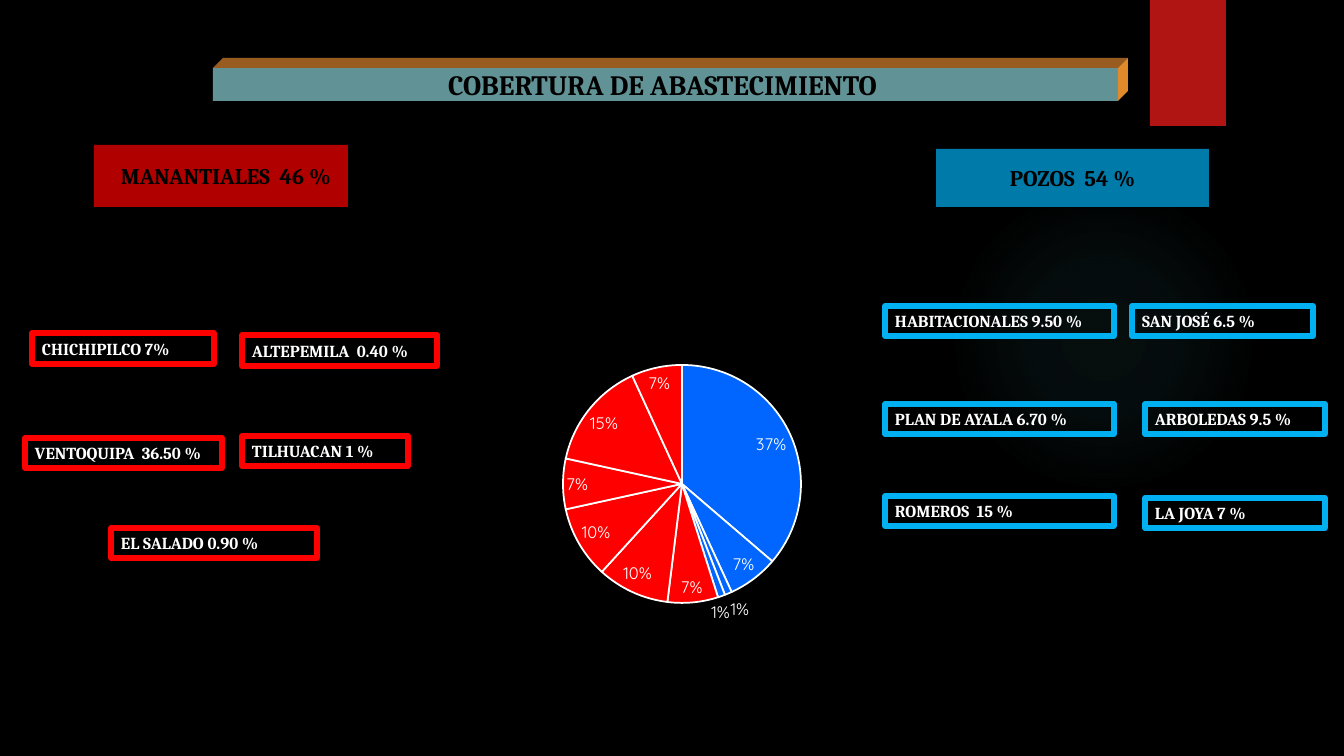
from dataclasses import dataclass

from lxml import etree
from pptx import Presentation
from pptx.chart.data import CategoryChartData
from pptx.dml.color import RGBColor
from pptx.enum.chart import XL_CHART_TYPE, XL_LABEL_POSITION
from pptx.enum.shapes import MSO_SHAPE
from pptx.enum.text import MSO_ANCHOR, PP_ALIGN
from pptx.oxml import parse_xml
from pptx.oxml.ns import nsdecls, qn
from pptx.util import Emu, Pt

RECTANGLE, OVAL = MSO_SHAPE.RECTANGLE, MSO_SHAPE.OVAL
LEFT, CENTER = PP_ALIGN.LEFT, PP_ALIGN.CENTER
MIDDLE = MSO_ANCHOR.MIDDLE
PIE, BEST_FIT = XL_CHART_TYPE.PIE, XL_LABEL_POSITION.BEST_FIT

SLIDE_WIDTH, SLIDE_HEIGHT = 1344, 756
EMU_PER_PX = 12192000 / SLIDE_WIDTH
TEXT_FONT, CHART_FONT = "Cambria", "Quicksand"
COLORS = {
    "black": "000000", "white": "FFFFFF", "ribbon": "B01513", "glow": "50B9C1",
    "bar": "619396", "bar_top": "985C20", "bar_side": "E08A2C",
    "springs_head": "B00000", "wells_head": "007AA8",
    "springs": "FF0000", "wells": "00B0F0", "slice_blue": "0066FF",
}


@dataclass(frozen=True)
class Box:
    text: str
    left: int
    top: int
    width: int
    height: int = 30
    color: str = "springs"


HEADERS = [
    Box("MANANTIALES  46 %", 94, 145, 254, 62, "springs_head"),
    Box("POZOS  54 %", 936, 149, 273, 58, "wells_head"),
]
SOURCES = [
    Box("CHICHIPILCO 7%", 32, 333, 182, 31),
    Box("ALTEPEMILA  0.40 %", 242, 335, 195, 31),
    Box("VENTOQUIPA  36.50 %", 25, 438, 197),
    Box("TILHUACAN 1 %", 242, 436, 166),
    Box("EL SALADO 0.90 %", 111, 528, 206),
    Box("HABITACIONALES 9.50 %", 885, 306, 229, color="wells"),
    Box("SAN JOSÉ 6.5 %", 1132, 306, 181, color="wells"),
    Box("PLAN DE AYALA 6.70 %", 885, 404, 229, color="wells"),
    Box("ARBOLEDAS 9.5 %", 1145, 404, 180, color="wells"),
    Box("ROMEROS  15 %", 885, 496, 229, color="wells"),
    Box("LA JOYA 7 %", 1145, 498, 180, color="wells"),
]
SPRING_SHARES = {"manvent": 0.37, "manchichi": 0.07, "mantilhua": 0.01,
                 "manaltepe": 0, "mansalado": 0.01}
WELL_SHARES = {"pozoplanay": 0.07, "pozohab": 0.1, "pozoarbo": 0.1,
               "pozosnjose": 0.07, "pozoromer": 0.15, "pozojoya": 0.07}


def px(value: float) -> Emu:
    return Emu(round(value * EMU_PER_PX))


def rgb(name: str) -> RGBColor:
    return RGBColor.from_string(COLORS[name])


def write(shape, text: str, *, size: int, color: str, align=LEFT,
          wrap: bool = True, inset_left: int = 10, inset_right: int = 10) -> None:
    frame = shape.text_frame
    frame.word_wrap = wrap
    frame.vertical_anchor = MIDDLE
    frame.margin_left, frame.margin_right = px(inset_left), px(inset_right)
    frame.margin_top = frame.margin_bottom = px(5)
    paragraph = frame.paragraphs[0]
    paragraph.text = text
    paragraph.alignment = align
    font = paragraph.font
    font.name, font.size, font.bold = TEXT_FONT, Pt(size), True
    font.color.rgb = rgb(color)


def paint(shape, color: str) -> None:
    shape.shadow.inherit = False
    shape.fill.solid()
    shape.fill.fore_color.rgb = rgb(color)
    shape.line.fill.background()


def add_block(slide, box: Box, kind=RECTANGLE):
    shape = slide.shapes.add_shape(
        kind, px(box.left), px(box.top), px(box.width), px(box.height))
    paint(shape, box.color)
    return shape


def add_face(slide, points: list[tuple[int, int]], color: str) -> None:
    builder = slide.shapes.build_freeform(*points[0], scale=EMU_PER_PX)
    builder.add_line_segments(points[1:], close=True)
    paint(builder.convert_to_shape(), color)


def add_glow(slide) -> None:
    glow = add_block(slide, Box("", 949, 184, 310, 310, "glow"), OVAL)
    stops = "".join(
        f'<a:gs pos="{position}000"><a:srgbClr val="{COLORS["glow"]}">'
        f'<a:alpha val="{alpha}000"/></a:srgbClr></a:gs>'
        for position, alpha in ((0, 7), (36, 6), (69, 0), (100, 0)))
    gradient = parse_xml(
        f'<a:gradFill {nsdecls("a")}><a:gsLst>{stops}</a:gsLst><a:path path="circle">'
        '<a:fillToRect l="50000" t="50000" r="50000" b="50000"/></a:path></a:gradFill>')
    properties = glow.element.spPr
    properties.replace(properties.find(qn("a:solidFill")), gradient)


def add_title(slide) -> None:
    left, top, right, bottom, depth = 213, 68, 1118, 101, 10
    title = slide.shapes.title
    title.left, title.top = px(left), px(top)
    title.width, title.height = px(right - left), px(bottom - top)
    title.fill.solid()
    title.fill.fore_color.rgb = rgb("bar")
    write(title, "COBERTURA DE ABASTECIMIENTO", size=20, color="black",
          align=CENTER, wrap=False, inset_right=16)
    corner = (right + depth, top - depth)
    add_face(slide, [(left, top), (left + depth, top - depth), corner, (right, top)],
             "bar_top")
    add_face(slide, [(right, top), corner, (right + depth, bottom - depth),
                     (right, bottom)], "bar_side")


def add_pie(slide) -> None:
    shares = SPRING_SHARES | WELL_SHARES
    data = CategoryChartData(number_format="0%")
    data.categories = list(shares)
    data.add_series("Series 1", list(shares.values()))
    chart = slide.shapes.add_chart(
        PIE, px(352), px(101), px(633), px(542), data).chart
    chart.has_title = chart.has_legend = False
    chart.font.name, chart.font.size = CHART_FONT, Pt(10)
    chart.font.color.rgb = rgb("white")
    plot = chart.plots[0]
    plot.vary_by_categories = True
    for index, name in enumerate(shares):
        slice_format = plot.series[0].points[index].format
        slice_format.fill.solid()
        slice_format.fill.fore_color.rgb = rgb(
            "slice_blue" if name in SPRING_SHARES else "springs")
        slice_format.line.color.rgb = rgb("white")
        slice_format.line.width = Pt(1.25)

    plot.has_data_labels = True
    labels = plot.data_labels
    labels.show_value, labels.show_percentage = True, False
    labels.number_format, labels.number_format_is_linked = "0%", False
    labels.position = BEST_FIT
    labels.font.name, labels.font.size = CHART_FONT, Pt(11.9)
    labels.font.color.rgb = rgb("white")

    # Fixed place of the pie inside the chart frame
    area = chart.element.find(".//" + qn("c:plotArea"))
    for old_layout in area.findall(qn("c:layout")):
        area.remove(old_layout)
    layout = etree.Element(qn("c:layout"))
    manual = etree.SubElement(layout, qn("c:manualLayout"))
    for tag, value in (("layoutTarget", "inner"), ("xMode", "edge"), ("yMode", "edge"),
                       ("x", 211 / 633), ("y", 264 / 542),
                       ("w", 238 / 633), ("h", 238 / 542)):
        etree.SubElement(manual, qn(f"c:{tag}")).set("val", str(value))
    area.insert(0, layout)


def main() -> None:
    presentation = Presentation()
    presentation.slide_width, presentation.slide_height = px(SLIDE_WIDTH), px(SLIDE_HEIGHT)
    slide = presentation.slides.add_slide(presentation.slide_layouts[5])
    slide.background.fill.solid()
    slide.background.fill.fore_color.rgb = rgb("black")

    # Backdrop and title bar
    add_glow(slide)
    add_block(slide, Box("", 1150, 0, 76, 126, "ribbon"))
    add_title(slide)

    # Group headers
    for header in HEADERS:
        inset = 20 if header.color == "springs_head" else 10
        write(add_block(slide, header), header.text, size=16, color="black",
              align=CENTER, wrap=False, inset_left=inset)

    # Shares by source
    add_pie(slide)
    for source in SOURCES:
        shape = add_block(slide, source)
        shape.fill.background()
        shape.line.color.rgb = rgb(source.color)
        shape.line.width = Pt(3.75)
        write(shape, source.text, size=12, color="white")

    presentation.save("out.pptx")


if __name__ == "__main__":
    main()
